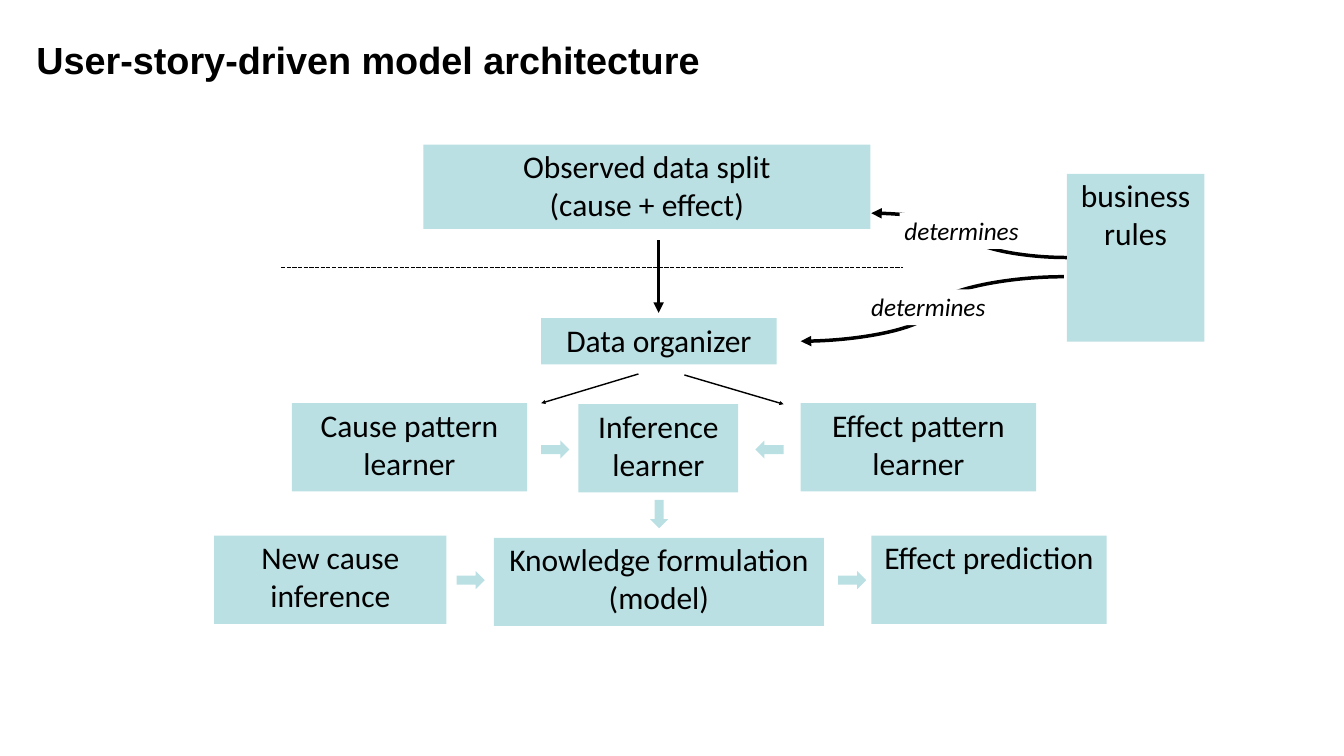
from lxml import etree
from pptx import Presentation
from pptx.dml.color import RGBColor
from pptx.enum.dml import MSO_LINE
from pptx.enum.shapes import MSO_CONNECTOR, MSO_SHAPE
from pptx.enum.text import MSO_ANCHOR, MSO_AUTO_SIZE, PP_ALIGN
from pptx.oxml.ns import qn
from pptx.util import Pt

PX = 9144  # EMU per px, 100 px to the inch
BLACK = RGBColor(0x00, 0x00, 0x00)
WHITE = RGBColor(0xFF, 0xFF, 0xFF)
PALE_TEAL = RGBColor(0xBB, 0xE0, 0xE3)
RECTANGLE, RIGHT_ARROW = MSO_SHAPE.RECTANGLE, MSO_SHAPE.RIGHT_ARROW
STRAIGHT, CURVE = MSO_CONNECTOR.STRAIGHT, MSO_CONNECTOR.CURVE
LEFT, CENTER = PP_ALIGN.LEFT, PP_ALIGN.CENTER
TOP, MIDDLE = MSO_ANCHOR.TOP, MSO_ANCHOR.MIDDLE

presentation = Presentation()
presentation.slide_width = 2667 * PX
presentation.slide_height = 1500 * PX
slide = presentation.slides.add_slide(presentation.slide_layouts[5])


def write_text(shape, text, size=45, font="Calibri", align=CENTER, anchor=TOP,
               bold=False, italic=False):
    frame = shape.text_frame
    frame.text = text
    frame.word_wrap = True
    frame.auto_size = MSO_AUTO_SIZE.NONE
    frame.vertical_anchor = anchor
    for paragraph in frame.paragraphs:
        paragraph.alignment = align
        paragraph.font.size = Pt(size)
        paragraph.font.name = font
        paragraph.font.bold = bold
        paragraph.font.italic = italic
        paragraph.font.color.rgb = BLACK


def add_line(kind, start, end, width, arrow=True):
    connector = slide.shapes.add_connector(kind, *[value * PX for value in start + end])
    connector.line.color.rgb = BLACK
    connector.line.width = Pt(width)
    if arrow:
        line_xml = connector.line._get_or_add_ln()
        etree.SubElement(line_xml, qn("a:tailEnd"), type="triangle")
    etree.SubElement(connector._element.spPr, qn("a:effectLst"))
    return connector


# Title
title = slide.shapes.title
title.left, title.top, title.width, title.height = [v * PX for v in (68, 26, 2530, 182)]
write_text(title, "User-story-driven model architecture", size=54, font="Arial",
           align=LEFT, anchor=MIDDLE, bold=True)
frame = title.text_frame
frame.margin_left = frame.margin_right = frame.margin_top = frame.margin_bottom = 4 * PX

# Boxes and block arrows: kind, left, top, width, height, rotation, text
BLOCKS = [
    (RECTANGLE, 840, 287, 887, 167, 0, "Observed data split\n(cause + effect)"),
    (RECTANGLE, 2117, 345, 273, 333, 0, "business rules"),
    (RECTANGLE, 1074, 631, 467, 92, 0, "Data organizer"),
    (RECTANGLE, 579, 800, 467, 175, 0, "Cause pattern learner"),
    (RECTANGLE, 1148, 802, 317, 175, 0, "Inference learner"),
    (RECTANGLE, 1589, 800, 467, 175, 0, "Effect pattern learner"),
    (RECTANGLE, 425, 1063, 461, 175, 0, "New cause inference"),
    (RECTANGLE, 980, 1067, 655, 175, 0, "Knowledge formulation (model)"),
    (RECTANGLE, 1729, 1063, 467, 175, 0, "Effect prediction"),
    (RIGHT_ARROW, 1074, 874, 56, 36, 0, ""),
    (RIGHT_ARROW, 1499, 874, 56, 36, 180, ""),
    (RIGHT_ARROW, 1280, 1002, 56, 36, 90, ""),
    (RIGHT_ARROW, 906, 1133, 56, 36, 0, ""),
    (RIGHT_ARROW, 1663, 1133, 56, 36, 0, ""),
]
for kind, left, top, width, height, rotation, text in BLOCKS:
    block = slide.shapes.add_shape(kind, left * PX, top * PX, width * PX, height * PX)
    block.shadow.inherit = False
    block.fill.solid()
    block.fill.fore_color.rgb = PALE_TEAL
    block.line.fill.background()
    block.rotation = rotation
    if text:
        write_text(block, text)

# Straight lines
divider = add_line(STRAIGHT, (558, 531), (1792, 531), 2, arrow=False)
divider.line.dash_style = MSO_LINE.SQUARE_DOT
add_line(STRAIGHT, (1307, 477), (1307, 621), 5)
add_line(STRAIGHT, (1267, 742), (1074, 800), 2)
add_line(STRAIGHT, (1358, 744), (1555, 802), 2)

# Curves from the business rules, each partly covered by its label
RULE_LINKS = [
    ((2117, 511), (1729, 423), (1785, 423)),
    ((2111, 549), (1589, 677), (1719, 574)),
]
for start, end, (left, top) in RULE_LINKS:
    add_line(CURVE, start, end, 5)
    label = slide.shapes.add_textbox(left * PX, top * PX, 326 * PX, 71 * PX)
    label.fill.solid()
    label.fill.fore_color.rgb = WHITE
    write_text(label, "determines", size=36, align=LEFT, italic=True)

presentation.save("out.pptx")
